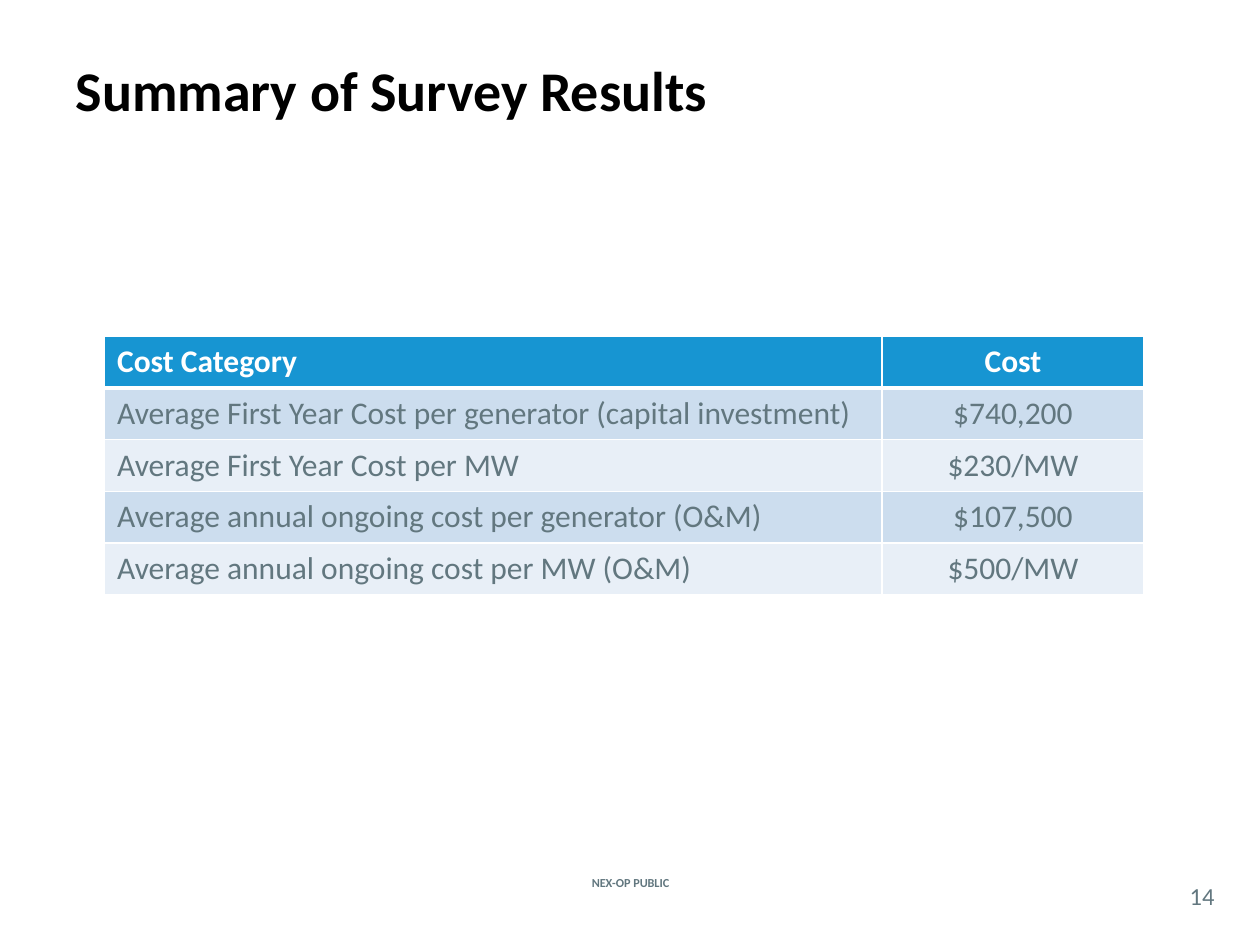
from lxml import etree
from pptx import Presentation
from pptx.dml.color import RGBColor
from pptx.enum.text import MSO_ANCHOR, PP_ALIGN
from pptx.oxml.ns import qn
from pptx.util import Inches, Pt

LEFT, CENTER = PP_ALIGN.LEFT, PP_ALIGN.CENTER
MIDDLE = MSO_ANCHOR.MIDDLE
TITLE_ONLY = 5

COSTS = [
    ("Cost Category", "Cost"),
    ("Average First Year Cost per generator (capital investment)", "$740,200"),
    ("Average First Year Cost per MW", "$230/MW"),
    ("Average annual ongoing cost per generator (O&M)", "$107,500"),
    ("Average annual ongoing cost per MW (O&M)", "$500/MW"),
]


def color(value):
    return RGBColor.from_string(value)


def write(frame, text, size=18, ink="62777F", bold=False, align=LEFT, font="Calibri"):
    para = frame.paragraphs[0]
    para.alignment = align
    span = para.add_run()
    span.text = text
    span.font.name = font
    span.font.size = Pt(size)
    span.font.bold = bold
    span.font.color.rgb = color(ink)


def add_border(cell, side, width, ink="FFFFFF"):
    properties = cell._tc.get_or_add_tcPr()
    line = etree.SubElement(properties, qn(f"a:ln{side}"), w=str(Pt(width)))
    fill = etree.SubElement(line, qn("a:solidFill"))
    etree.SubElement(fill, qn("a:srgbClr"), val=ink)


class SlideBuilder:
    """Holds the table style and the current slide, and adds its elements."""

    header_fill = "1795D2"
    band_fills = ("E8EFF7", "CCDDEE")
    thin, thick = 1, 3

    def __init__(self, page):
        self.page = page

    def title(self, text, left, top, width, height):
        box = self.page.shapes.title
        box.left, box.top = Inches(left), Inches(top)
        box.width, box.height = Inches(width), Inches(height)
        box.text_frame.vertical_anchor = MIDDLE
        write(box.text_frame, text, size=32, ink="000000", bold=True)

    def label(self, text, left, top, width, height, **style):
        box = self.page.shapes.add_textbox(
            Inches(left), Inches(top), Inches(width), Inches(height))
        frame = box.text_frame
        frame.word_wrap = True
        frame.vertical_anchor = MIDDLE
        frame.margin_left = frame.margin_right = 0
        frame.margin_top = frame.margin_bottom = 0
        write(frame, text, align=CENTER, **style)

    def table(self, rows, left, top, widths, row_height):
        table = self.page.shapes.add_table(
            len(rows), len(widths), Inches(left), Inches(top),
            Inches(sum(widths)), Inches(row_height * len(rows))).table
        for column, width in zip(table.columns, widths):
            column.width = Inches(width)
        for row, texts in enumerate(rows):
            for column, text in enumerate(texts):
                self.cell(table.cell(row, column), text, row, column)

    def cell(self, cell, text, row, column):
        header = row == 0
        add_border(cell, "L", self.thin)
        add_border(cell, "R", self.thin)
        add_border(cell, "T", self.thick if row == 1 else self.thin)
        add_border(cell, "B", self.thick if header else self.thin)
        cell.fill.solid()
        fill = self.header_fill if header else self.band_fills[row % 2]
        cell.fill.fore_color.rgb = color(fill)
        write(cell.text_frame, text, ink="FFFFFF" if header else "62777F",
              bold=header, align=CENTER if column else LEFT)


def main():
    deck = Presentation()
    deck.slide_width, deck.slide_height = Inches(10), Inches(7.5)
    builder = SlideBuilder(deck.slides.add_slide(deck.slide_layouts[TITLE_ONLY]))
    builder.label("NEX-OP PUBLIC", 4.27, 6.92, 1.47, 0.17, size=7, bold=True)
    builder.label("14", 9.33, 6.96, 0.42, 0.29, size=14)
    builder.title("Summary of Survey Results", 0.5, 0.08, 9, 1.25)
    builder.table(COSTS, 0.83, 2.67, widths=(6.17, 2.08), row_height=0.41)
    deck.save("out.pptx")


if __name__ == "__main__":
    main()
